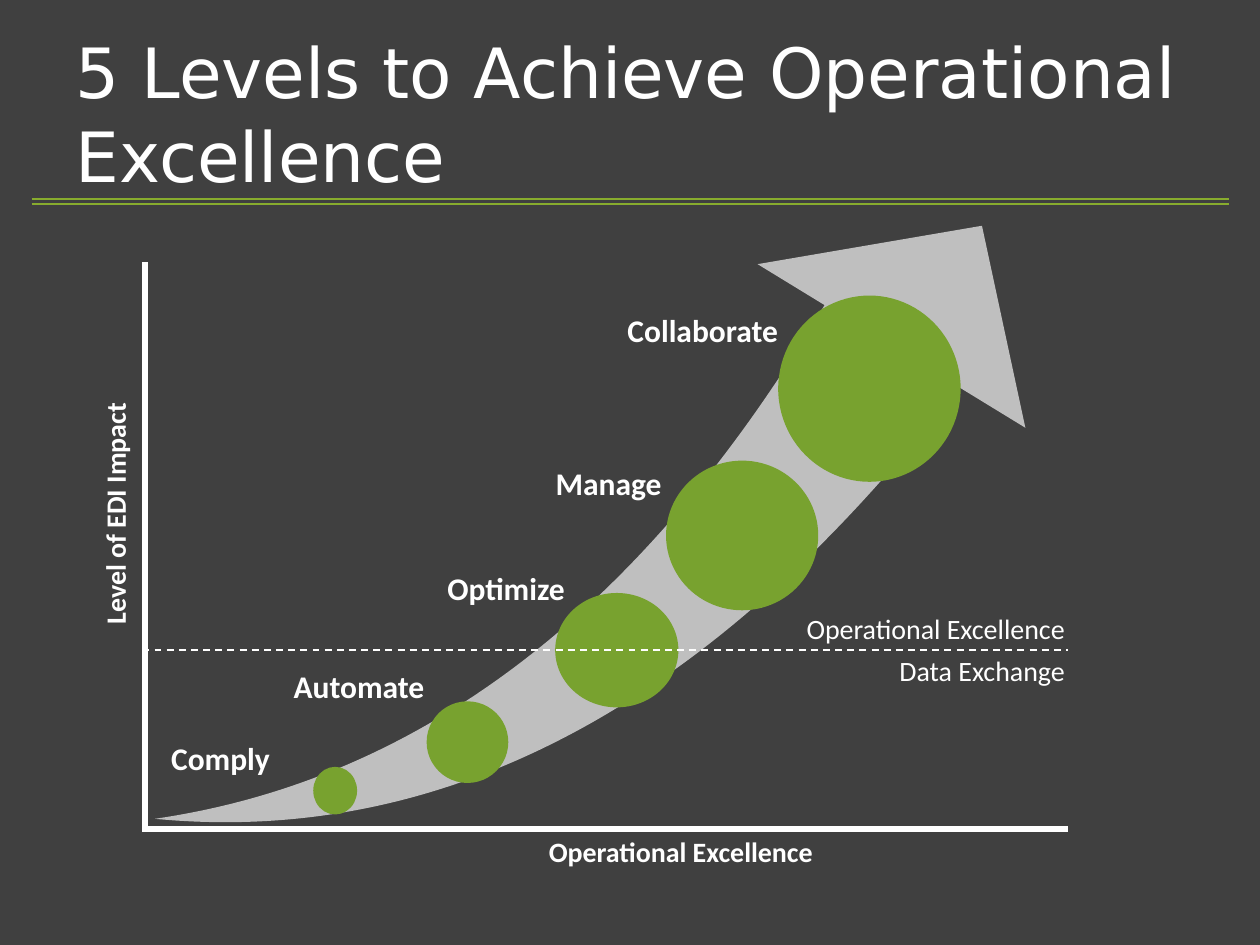
from lxml import etree
from pptx import Presentation
from pptx import util as u
from pptx.dml.color import RGBColor
from pptx.enum import dml, shapes, text
from pptx.oxml.ns import qn

COLUMNS, ROWS = 100, 75
CELL = u.Inches(0.1)
CHARCOAL = RGBColor(0x40, 0x40, 0x40)
SILVER = RGBColor(0xBF, 0xBF, 0xBF)
GREEN = RGBColor(0x78, 0xA2, 0x2F)
RULE_GREEN = RGBColor(0x88, 0xAC, 0x2E)
WHITE = RGBColor(0xFF, 0xFF, 0xFF)

LEVELS = [
    ("Comply", (12.6, 59, 10.4, 8.2), 1, (25, 61, 3.2, 3.5)),
    ("Automate", (21.8, 53.3, 13.1, 3), 1.5, (34, 55.8, 6.2, 6.2)),
    ("Optimize", (33.5, 45.5, 15.3, 4.5), 2, (44.2, 47.2, 9.5, 8.8)),
    ("Manage", (41.5, 37.2, 17.5, 4.2), 2.6, (53, 36.7, 11.8, 11.6)),
    ("Collaborate", (46.5, 25, 15.8, 4.2), 3.3, (61.9, 23.6, 14.2, 14.5)),
]
CAPTIONS = [
    ("Data Exchange", (62.3, 50.8, 23.2, 4.8), False, 0),
    ("Operational Excellence", (60.7, 47.5, 24.8, 4.8), False, 0),
    ("Operational Excellence", (40.7, 65.2, 24.8, 4.8), True, 0),
    ("Level of EDI Impact", (-3.3, 41, 24.8, 4.8), True, 270),
]
AXIS_LEFT, AXIS_RIGHT, AXIS_BOTTOM = 11.3, 84.8, 65.8
AXES = [
    ((11.5, AXIS_BOTTOM), (11.5, 20.8), 3, None),
    ((AXIS_LEFT, AXIS_BOTTOM), (AXIS_RIGHT, AXIS_BOTTOM), 3, None),
    ((AXIS_LEFT, 51.6), (AXIS_RIGHT, 51.6), 1, dml.MSO_LINE.DASH),
]


def cells(*counts):
    return [round(count * CELL) for count in counts]


def format_text(box, size, font, bold=False, align=text.PP_ALIGN.LEFT):
    para = box.text_frame.paragraphs[0]
    para.alignment = align
    for span in para.runs:
        span.font.size = u.Pt(size)
        span.font.name = font
        span.font.bold = bold
        span.font.color.rgb = WHITE
    return para


def add_filled(container, kind, area, fill, outline=None):
    shape = container.add_shape(kind, *cells(*area))
    shape.shadow.inherit = False
    shape.fill.solid()
    shape.fill.fore_color.rgb = fill
    if outline is None:
        shape.line.fill.background()
    else:
        shape.line.color.rgb = outline
        shape.line.width = u.Pt(2)
    return shape


def add_line(page, start, end, color, width, dash=None):
    line = page.shapes.add_connector(
        shapes.MSO_CONNECTOR.STRAIGHT, *cells(*start, *end))
    line.line.color.rgb = color
    line.line.width = u.Pt(width)
    if dash is not None:
        line.line.dash_style = dash
    etree.SubElement(line.element.spPr, qn("a:effectLst"))


def add_label(container, words, area, indent):
    box = container.add_textbox(*cells(*area))
    frame = box.text_frame
    frame.word_wrap = True
    frame.margin_left, = cells(indent)
    frame.margin_top = frame.margin_right = frame.margin_bottom = 0
    frame.text = words
    format_text(box, 18, "Calibri", bold=True).line_spacing = 0.9


def add_caption(page, words, area, bold, rotation):
    box = page.shapes.add_textbox(*cells(*area))
    box.rotation = rotation
    frame = box.text_frame
    frame.word_wrap = True
    frame.vertical_anchor = text.MSO_ANCHOR.MIDDLE
    frame.text = words
    format_text(box, 16, "Calibri", bold, text.PP_ALIGN.RIGHT)


def add_title(page, words):
    title = page.shapes.title
    title.left, title.top, title.width, title.height = cells(5, 2.7, 90, 12.5)
    frame = title.text_frame
    frame.text = words
    frame.word_wrap = True
    frame.auto_size = text.MSO_AUTO_SIZE.NONE
    frame.vertical_anchor = text.MSO_ANCHOR.MIDDLE
    format_text(title, 39.6, "DejaVu Sans")
    backdrop = add_filled(page.shapes, shapes.MSO_SHAPE.RECTANGLE,
                          (0, 0, COLUMNS, ROWS), CHARCOAL, CHARCOAL)
    title.element.addprevious(backdrop.element)


def add_growth(page):
    growth = page.shapes.add_group_shape().shapes
    swoosh = add_filled(growth, shapes.MSO_SHAPE.SWOOSH_ARROW,
                        (14.4, 18.8, 70.4, 49.5), SILVER)
    swoosh.adjustments[0] = swoosh.adjustments[1] = 0.25
    swoosh.rotation = 295
    swoosh.element.spPr.xfrm.set("flipV", "1")
    for words, label_area, indent, circle_area in LEVELS:
        add_filled(growth, shapes.MSO_SHAPE.OVAL, circle_area, GREEN, GREEN)
        add_label(growth, words, label_area, indent)


def main():
    deck = Presentation()
    deck.slide_width, deck.slide_height = cells(COLUMNS, ROWS)
    page = deck.slides.add_slide(deck.slide_layouts[5])
    add_title(page, "5 Levels to Achieve Operational Excellence")
    add_growth(page)
    for start, end, width, dash in AXES:
        add_line(page, start, end, WHITE, width, dash)
    for caption in CAPTIONS:
        add_caption(page, *caption)
    for row in (15.8, 16.2):
        add_line(page, (2.5, row), (97.5, row), RULE_GREEN, 1.5)
    deck.save("out.pptx")


if __name__ == "__main__":
    main()
